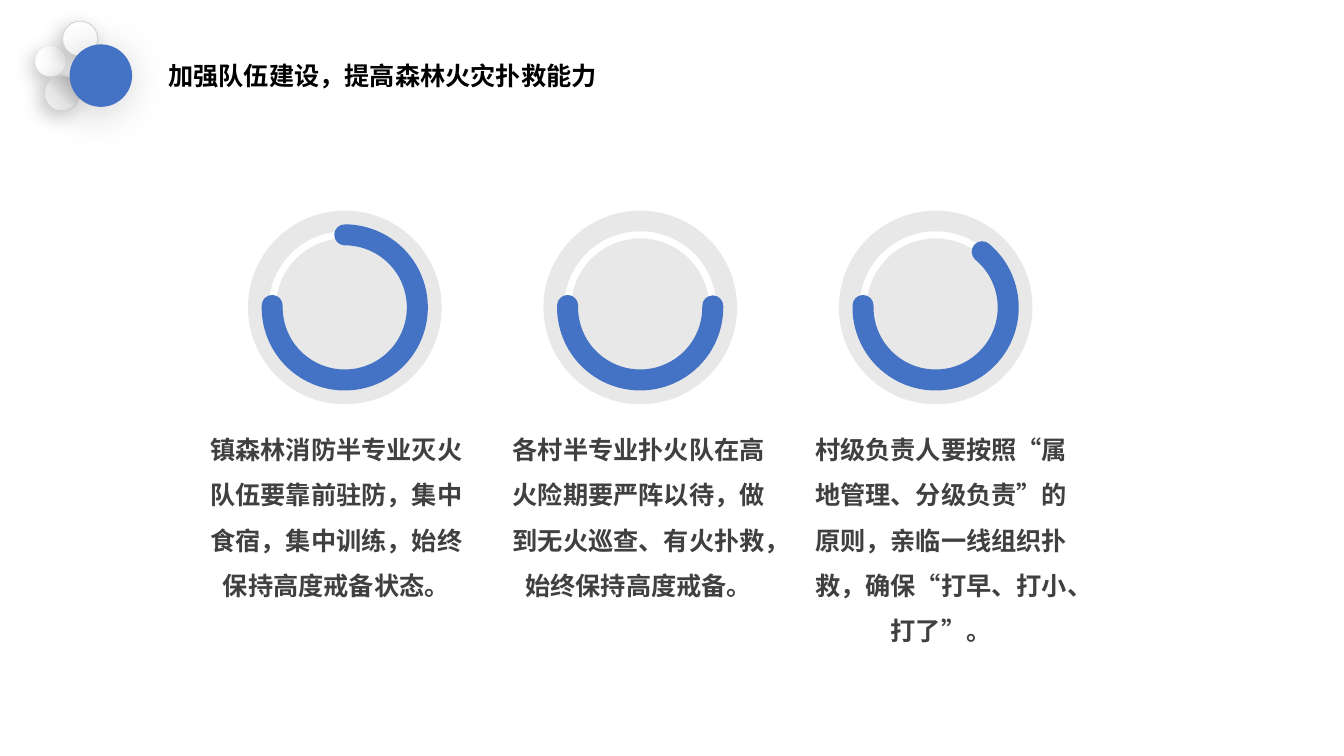
from lxml import etree
from pptx import Presentation
from pptx import util as u
from pptx.dml.color import RGBColor
from pptx.enum import shapes, text
from pptx.oxml import ns

COLORS = {
    "blue": "4472C4", "white": "FFFFFF", "rim": "D9D9D9", "disc": "D9D9D9",
    "body": "404040", "title": "000000", "shadow": "000000",
}
PEARL = [(0, "BFBFBF"), (18, "C6C6C6"), (61, "EEEEEE"), (100, "F5F5F5")]
FONT = "Noto Sans CJK SC"
TITLE = "加强队伍建设，提高森林火灾扑救能力"
ARC_END = 181.53
DUTIES = [
    (270, 1.92, "镇森林消防半专业灭火队伍要靠前驻防，集中食宿，集中训练，始终保持高度戒备状态。"),
    (358.83, 1.92, "各村半专业扑火队在高火险期要严阵以待，做到无火巡查、有火扑救，始终保持高度戒备。"),
    (309.91, 2.37, "村级负责人要按照“属地管理、分级负责”的原则，亲临一线组织扑救，确保“打早、打小、打了”。"),
]


def rgb(name):
    """Return the named palette colour."""
    return RGBColor.from_string(COLORS[name])


def add_element(parent, tag, **attributes):
    """Append a DrawingML element to a parent and return it."""
    return etree.SubElement(parent, ns.qn("a:" + tag), attributes)


def add_color(parent, color, alpha=None):
    """Append a hex colour, with an optional opacity in percent."""
    srgb = add_element(parent, "srgbClr", val=color)
    if alpha is not None:
        add_element(srgb, "alpha", val=str(alpha * 1000))


def add_round(group, kind, left, top, size, fill=None, line=None, width=0.75):
    """Add a square-boxed shape with a plain fill and line and no shadow."""
    shape = group.shapes.add_shape(kind, *map(u.Inches, (left, top, size, size)))
    shape.shadow.inherit = False
    if fill:
        shape.fill.solid()
        shape.fill.fore_color.rgb = rgb(fill)
    else:
        shape.fill.background()
    if line:
        shape.line.color.rgb = rgb(line)
        shape.line.width = u.Pt(width)
    else:
        shape.line.fill.background()
    return shape


def cast_shadow(shape, alpha, blur):
    """Give a shape a soft shadow falling to the lower left."""
    effects = shape._element.spPr.find(ns.qn("a:effectLst"))
    outer = add_element(effects, "outerShdw", blurRad=str(u.Pt(blur)), dist=str(u.Pt(5)),
                        dir=str(130 * 60000), algn="ctr", rotWithShape="0")
    add_color(outer, COLORS["shadow"], alpha)


def shade_pearl(shape):
    """Fill a shape with the grey pearl gradient."""
    shape.fill.gradient()
    shape.fill.gradient_angle = 360 - 130
    stops = shape._element.spPr.find(".//" + ns.qn("a:gsLst"))
    for stop in list(stops):
        stops.remove(stop)
    for position, color in PEARL:
        add_color(add_element(stops, "gs", pos=str(position * 1000)), color)


def add_emblem(slide, left, top):
    """Draw the cluster of three pale balls and a blue one."""
    emblem = slide.shapes.add_group_shape()
    balls = [
        (0, 0.25, 0.3, "white", None, 22, 14),
        (0.09, 0.54, 0.35, None, "rim", 22, 14),
        (0.27, 0, 0.35, "white", "rim", 22, 14),
        (0.34, 0.23, 0.62, "blue", None, 20, 30),
    ]
    for dx, dy, size, fill, rim, alpha, blur in balls:
        ball = add_round(emblem, shapes.MSO_SHAPE.OVAL, left + dx, top + dy, size, fill, rim)
        if fill is None:
            shade_pearl(ball)
        cast_shadow(ball, alpha, blur)


def add_gauge(slide, left, top, size, arc_start):
    """Draw a grey disc with a white track and a thick blue arc."""
    gauge = slide.shapes.add_group_shape()
    disc = add_round(gauge, shapes.MSO_SHAPE.OVAL, left, top, size, "disc")
    disc_color = disc._element.spPr.find(".//" + ns.qn("a:srgbClr"))
    add_element(disc_color, "alpha", val="60000")
    inset = 0.24
    track = (left + inset, top + inset, size - 2 * inset)
    add_round(gauge, shapes.MSO_SHAPE.OVAL, *track, line="white", width=5)
    arc = add_round(gauge, shapes.MSO_SHAPE.ARC, *track, line="blue", width=15)
    for index, angle in enumerate((arc_start, ARC_END)):
        arc.adjustments[index] = angle * 0.6
    arc._element.spPr.find(ns.qn("a:ln")).set("cap", "rnd")


def add_words(slide, left, top, width, height, words, color, align=None, spacing=None):
    """Place a bold wrapped paragraph in the given box."""
    box = slide.shapes.add_textbox(*map(u.Inches, (left, top, width, height)))
    frame = box.text_frame
    frame.word_wrap = True
    frame.auto_size = text.MSO_AUTO_SIZE.SHAPE_TO_FIT_TEXT
    paragraph = frame.paragraphs[0]
    paragraph.alignment = align
    paragraph.line_spacing = spacing
    run = paragraph.add_run()
    run.text = words
    run.font.size = u.Pt(18)
    run.font.bold = True
    run.font.name = FONT
    run.font.color.rgb = rgb(color)
    add_element(run._r.get_or_add_rPr(), "ea", typeface=FONT)


def add_duties(slide, left, top):
    """Lay out the three gauges, each with its duty text below."""
    for column, (arc_start, height, words) in enumerate(DUTIES):
        add_gauge(slide, left + 0.54 + 2.93 * column, top, 1.92, arc_start)
        add_words(slide, left + 3 * column, top + 2.02, 2.83, height, words,
                  "body", text.PP_ALIGN.CENTER, 1.5)


def main():
    """Build the slide and save it."""
    deck = Presentation()
    deck.slide_width, deck.slide_height = u.Inches(13.33), u.Inches(7.5)
    slide = deck.slides.add_slide(deck.slide_layouts[6])
    add_emblem(slide, 0.35, 0.21)
    add_duties(slide, 1.92, 2.09)
    add_words(slide, 1.57, 0.55, 5.56, 0.4, TITLE, "title")
    deck.save("out.pptx")


if __name__ == "__main__":
    main()
